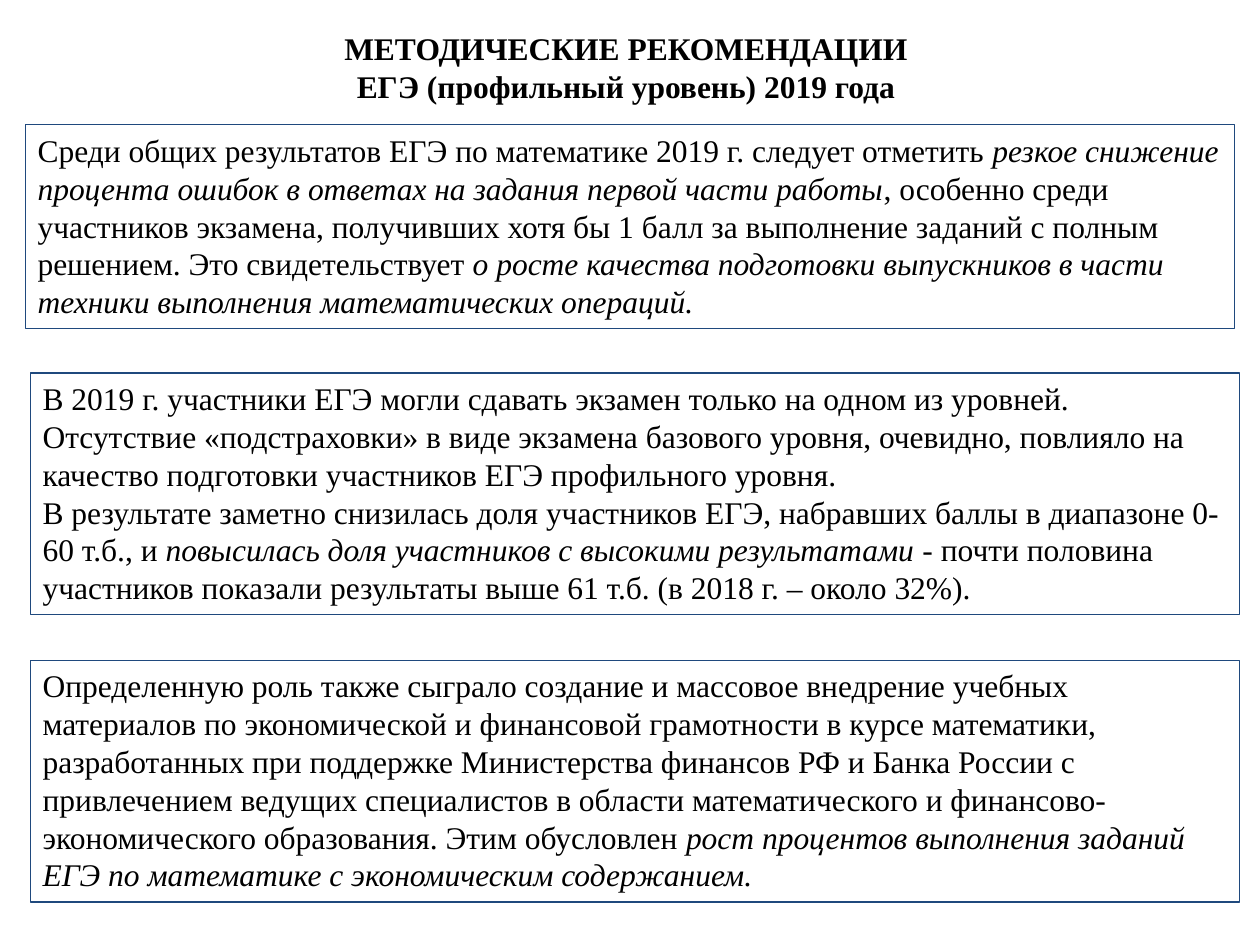
"""Build the slide of methodical recommendations on the 2019 profile-level exam."""
from dataclasses import dataclass

import pptx
import pptx.dml.color
import pptx.enum.shapes
import pptx.enum.text
import pptx.slide
import pptx.text.text
import pptx.util

COLORS = {"text": "000000", "border": "1F497D", "background": "FFFFFF"}
FONT = "Times New Roman"
Inches = pptx.util.Inches


@dataclass(frozen=True)
class Phrase:
    text: str
    italic: bool = False
    bold: bool = False


@dataclass(frozen=True)
class Finding:
    left: float
    top: float
    height: float
    paragraphs: list[list[Phrase]]
    width: float = 9.6


HEADING = [
    [Phrase("МЕТОДИЧЕСКИЕ РЕКОМЕНДАЦИИ ", bold=True)],
    [Phrase("ЕГЭ (профильный уровень) 2019 года ", bold=True)],
]

FINDINGS = [
    Finding(0.2, 0.99, 1.62, [[
        Phrase("Среди общих результатов ЕГЭ по математике 2019 г. следует отметить "),
        Phrase("резкое снижение процента ошибок в ответах на задания первой части работы", italic=True),
        Phrase(", особенно среди участников экзамена, получивших хотя бы 1 балл за выполнение "
               "заданий с полным решением. Это свидетельствует "),
        Phrase("о росте качества подготовки выпускников в части техники выполнения "
               "математических операций.", italic=True),
    ]]),
    Finding(0.24, 2.96, 1.92, [
        [Phrase("В 2019 г. участники ЕГЭ могли сдавать экзамен только на одном из уровней. "
                "Отсутствие «подстраховки» в виде экзамена базового уровня, очевидно, повлияло "
                "на качество подготовки участников ЕГЭ профильного уровня.")],
        [Phrase("В результате заметно снизилась доля участников ЕГЭ, набравших баллы "
                "в диапазоне 0-60 т.б., и "),
         Phrase("повысилась доля участников с высокими результатами ", italic=True),
         Phrase("- почти половина участников показали результаты выше 61 т.б. "
                "(в 2018 г. – около 32%).")],
    ]),
    Finding(0.24, 5.24, 1.92, [[
        Phrase("Определенную роль также сыграло создание и массовое внедрение учебных материалов "
               "по экономической и финансовой грамотности в курсе математики, разработанных при "
               "поддержке Министерства финансов РФ и Банка России с привлечением ведущих "
               "специалистов в области математического и финансово-экономического образования. "
               "Этим обусловлен "),
        Phrase("рост процентов выполнения заданий ЕГЭ по математике с экономическим "
               "содержанием.", italic=True),
    ]]),
]


def color(name: str) -> pptx.dml.color.RGBColor:
    return pptx.dml.color.RGBColor.from_string(COLORS[name])


def write(frame: pptx.text.text.TextFrame, paragraphs: list[list[Phrase]],
          alignment: pptx.enum.text.PP_ALIGN, anchor: pptx.enum.text.MSO_ANCHOR) -> None:
    frame.word_wrap = True
    frame.auto_size = pptx.enum.text.MSO_AUTO_SIZE.NONE
    frame.vertical_anchor = anchor
    for index, phrases in enumerate(paragraphs):
        paragraph = frame.add_paragraph() if index else frame.paragraphs[0]
        paragraph.alignment = alignment
        for phrase in phrases:
            run = paragraph.add_run()
            run.text = phrase.text
            run.font.name = FONT
            run.font.size = pptx.util.Pt(18)
            run.font.bold = phrase.bold
            run.font.italic = phrase.italic
            run.font.color.rgb = color("text")


def draw_heading(slide: pptx.slide.Slide) -> None:
    heading = slide.shapes.title
    heading.left, heading.top = Inches(0), Inches(0)
    heading.width, heading.height = Inches(10), Inches(0.88)
    write(heading.text_frame, HEADING,
          pptx.enum.text.PP_ALIGN.CENTER, pptx.enum.text.MSO_ANCHOR.BOTTOM)


def draw_finding(slide: pptx.slide.Slide, finding: Finding) -> None:
    box = slide.shapes.add_shape(
        pptx.enum.shapes.MSO_SHAPE.RECTANGLE, Inches(finding.left), Inches(finding.top),
        Inches(finding.width), Inches(finding.height))
    box.shadow.inherit = False
    box.fill.background()
    box.line.color.rgb = color("border")
    box.line.width = pptx.util.Pt(0.75)
    write(box.text_frame, finding.paragraphs,
          pptx.enum.text.PP_ALIGN.LEFT, pptx.enum.text.MSO_ANCHOR.TOP)


def main() -> None:
    presentation = pptx.Presentation()
    presentation.slide_width, presentation.slide_height = Inches(10), Inches(7.5)
    slide = presentation.slides.add_slide(presentation.slide_layouts.get_by_name("Title Only"))
    slide.background.fill.solid()
    slide.background.fill.fore_color.rgb = color("background")
    draw_heading(slide)
    for finding in FINDINGS:
        draw_finding(slide, finding)
    presentation.save("out.pptx")


if __name__ == "__main__":
    main()
